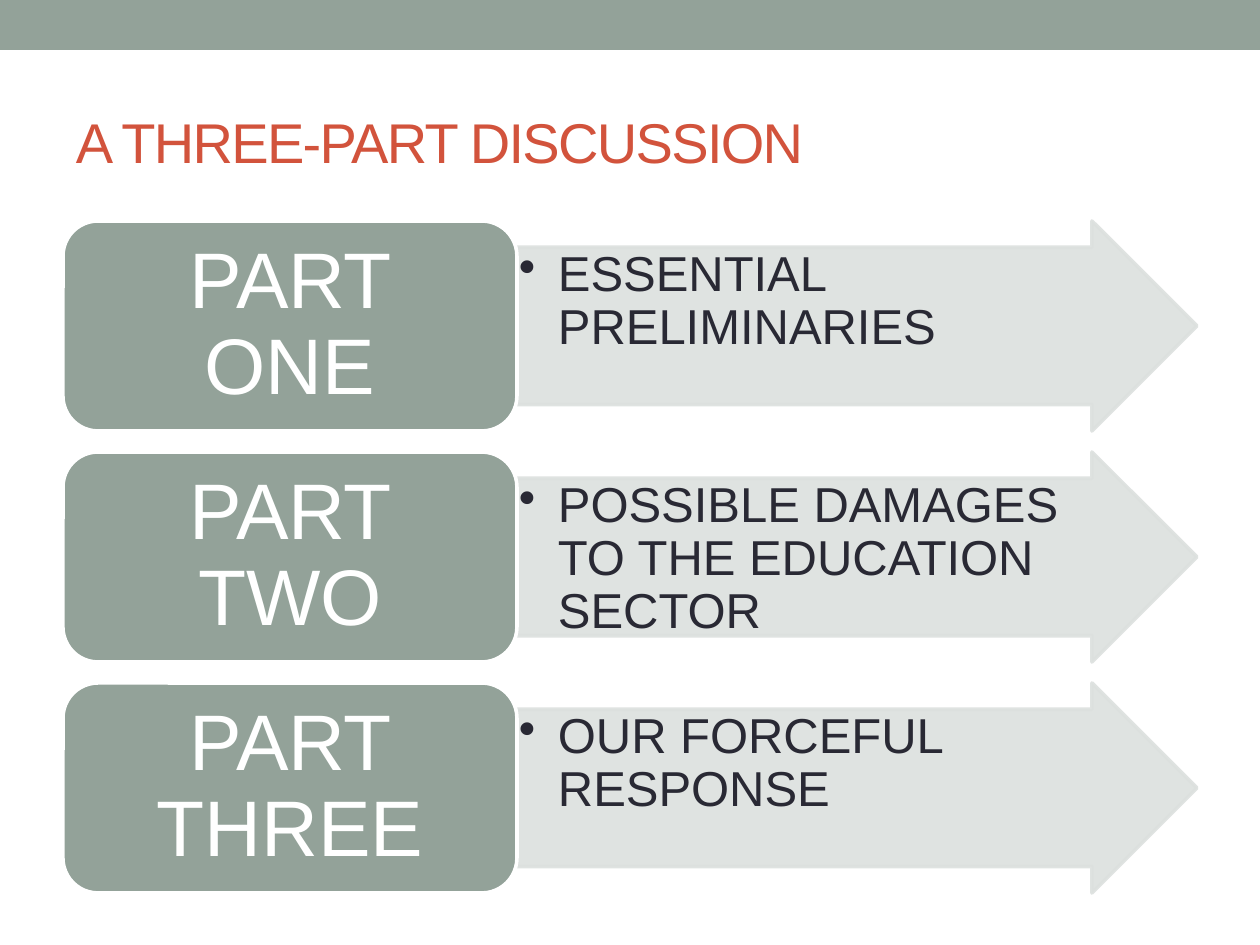
from pptx import Presentation
from pptx import util as u
from pptx.dml import color
from pptx.enum import shapes, text
from pptx.oxml import ns
from lxml import etree

EMU_PER_PX = 914400 / 126
SAGE = "93A299"
MIST = "DCE0DE"
WHITE = "FFFFFF"
PARTS = [
    ("PART ONE", "ESSENTIAL PRELIMINARIES"),
    ("PART TWO", "POSSIBLE DAMAGES TO THE EDUCATION SECTOR"),
    ("PART THREE", "OUR FORCEFUL RESPONSE"),
]


def px(length):
    return u.Emu(round(length * EMU_PER_PX))


def paint(target, hex_colour, opacity=100):
    if hasattr(target, "solid"):
        target.solid()
        target = target.fore_color
    target.rgb = color.RGBColor.from_string(hex_colour)
    if opacity < 100:
        for element in target._xFill.iter(ns.qn("a:srgbClr")):
            etree.SubElement(element, ns.qn("a:alpha"), val=str(opacity * 1000))


def write(box, words, size, colour, align=text.PP_ALIGN.LEFT,
          anchor=text.MSO_ANCHOR.MIDDLE, insets=(13, 6, 13, 6),
          line_spacing=0.9, tracking=0, bullet_indent=0):
    frame = box.text_frame
    frame.word_wrap = True
    frame.auto_size = text.MSO_AUTO_SIZE.NONE
    frame.vertical_anchor = anchor
    (frame.margin_left, frame.margin_top,
     frame.margin_right, frame.margin_bottom) = map(px, insets)
    para = frame.paragraphs[0]
    para.alignment = align
    para.line_spacing = line_spacing
    span = para.add_run()
    span.text = words
    span.font.name = "Arial"
    span.font.size = u.Pt(size)
    paint(span.font.color, colour)
    if tracking:
        span._r.get_or_add_rPr().set("spc", str(tracking * 100))
    if bullet_indent:
        properties = para._p.get_or_add_pPr()
        properties.set("marL", str(px(bullet_indent)))
        properties.set("indent", str(-px(bullet_indent)))
        etree.SubElement(properties, ns.qn("a:buChar"), char="•")


def add_block(page, kind, left, top, width, height, fill, line=None, opacity=100):
    block = page.shapes.add_shape(kind, px(left), px(top), px(width), px(height))
    block.shadow.inherit = False
    paint(block.fill, fill, opacity)
    if line:
        block.line.width = u.Pt(2.08)
        paint(block.line.fill, line, opacity)
    else:
        block.line.fill.background()
    return block


def add_title(page, words):
    title = page.shapes.title
    title.left, title.top, title.width, title.height = map(px, (63, 73, 1134, 136))
    write(title, words, 32, "D2533C", line_spacing=1.0, tracking=-1)


def add_part(page, top, label, topic):
    arrow = add_block(page, shapes.MSO_SHAPE.RIGHT_ARROW, 517, top, 680, 210,
                      MIST, line=MIST, opacity=90)
    arrow.adjustments[0] = 0.75
    arrow.adjustments[1] = 0.5
    write(arrow, topic, 28, "292934", anchor=text.MSO_ANCHOR.TOP,
          insets=(2, 2, 54, 2), bullet_indent=39)
    card = add_block(page, shapes.MSO_SHAPE.ROUNDED_RECTANGLE, 63, top, 454, 210,
                     SAGE, line=WHITE)
    write(card, label, 45, WHITE, align=text.PP_ALIGN.CENTER,
          insets=(24, 11, 24, 11))


def main():
    deck = Presentation()
    deck.slide_width, deck.slide_height = px(1260), px(945)
    page = deck.slides.add_slide(deck.slide_layouts[5])
    paint(page.background.fill, WHITE)
    add_block(page, shapes.MSO_SHAPE.RECTANGLE, 0, 0, 1260, 50, SAGE)
    add_title(page, "A THREE-PART DISCUSSION")
    for row, (label, topic) in enumerate(PARTS):
        add_part(page, 221 + row * 231, label, topic)
    deck.save("out.pptx")


if __name__ == "__main__":
    main()
